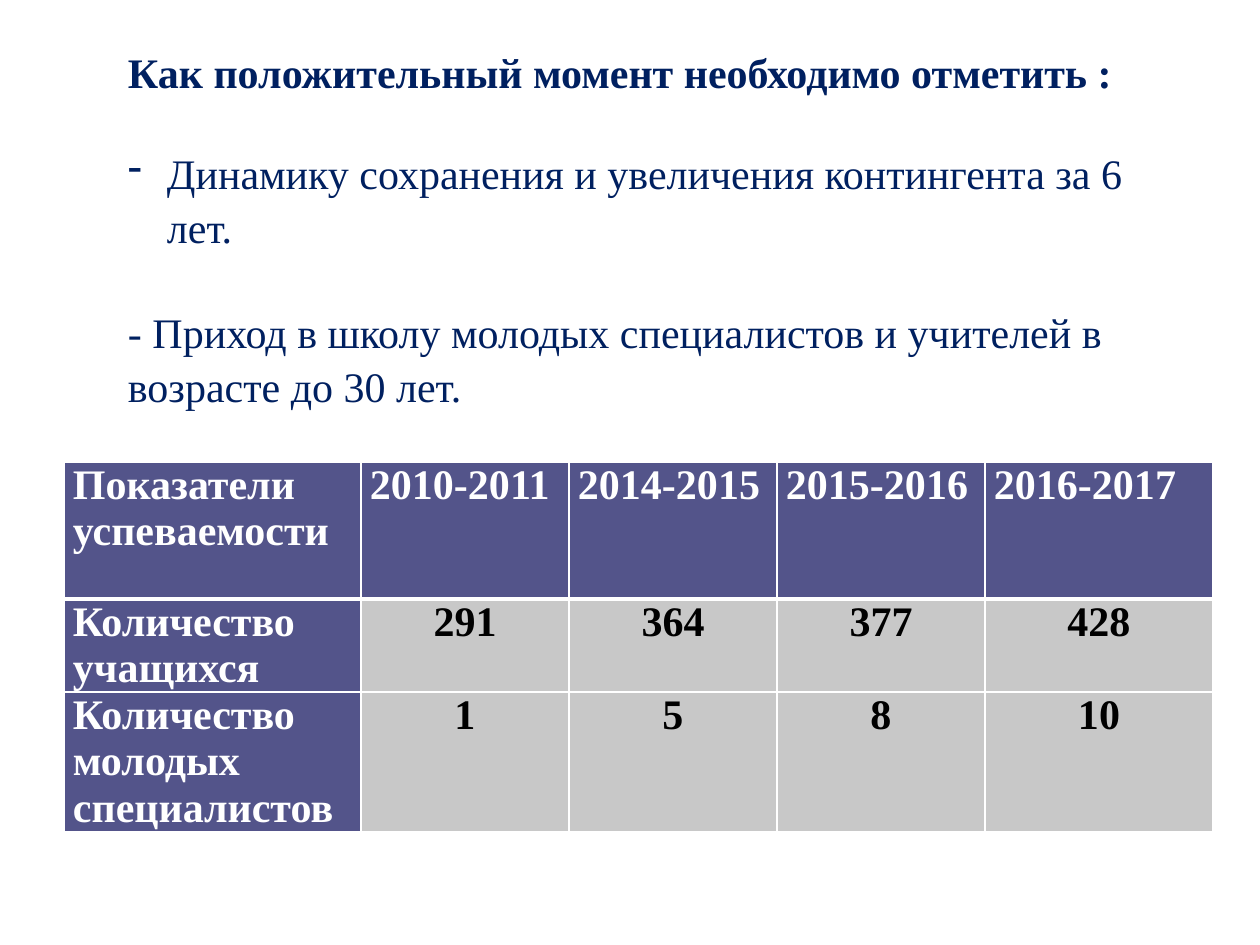
from lxml import etree
from pptx import Presentation
from pptx.dml.color import RGBColor
from pptx.enum.text import MSO_ANCHOR, MSO_AUTO_SIZE, PP_ALIGN
from pptx.oxml.ns import qn
from pptx.util import Emu, Pt

LEFT, CENTER, JUSTIFY = PP_ALIGN.LEFT, PP_ALIGN.CENTER, PP_ALIGN.JUSTIFY
TOP, FIXED = MSO_ANCHOR.TOP, MSO_AUTO_SIZE.NONE

PX_PER_INCH = 126
COLORS = {"navy": "002060", "violet": "53548A", "gray": "C8C8C8",
          "white": "FFFFFF", "black": "000000"}

HEADING = "Как положительный момент необходимо отметить :"
# Each item: text, bullet character, hanging indent in px
ITEMS = [
    ("Динамику сохранения и увеличения контингента за 6 лет.", "-", 39),
    ("- Приход в школу молодых специалистов и учителей в возрасте до 30 лет.", None, 0),
]
ROWS = [
    ["Показатели успеваемости", "2010-2011", "2014-2015", "2015-2016", "2016-2017"],
    ["Количество учащихся", "291", "364", "377", "428"],
    ["Количество молодых специалистов", "1", "5", "8", "10"],
]
COLUMN_WIDTHS = [297, 208, 208, 208, 228]
ROW_HEIGHTS = [137, 93, 139]


def px(length):
    return Emu(round(length * 914400 / PX_PER_INCH))


def rgb(name):
    return RGBColor.from_string(COLORS[name])


def set_values(target, values):
    for name, value in values.items():
        setattr(target, name, value)


class SlideBuilder:
    font = {"name": "Times New Roman", "size": Pt(24)}
    frame = {"word_wrap": True, "auto_size": FIXED, "vertical_anchor": TOP,
             "margin_left": px(13), "margin_right": px(13),
             "margin_top": px(6), "margin_bottom": px(6)}
    paragraph = {"alignment": LEFT, "line_spacing": 1.08,
                 "space_before": Pt(0), "space_after": Pt(0)}
    cell_margins = {"margin_left": px(9), "margin_right": px(9),
                    "margin_top": 0, "margin_bottom": 0}

    def __init__(self, page):
        self.page = page

    def add_text(self, para, text, color, bold, layout):
        set_values(para, layout)
        span = para.add_run()
        span.text = text
        set_values(span.font, {**self.font, "bold": bold})
        span.font.color.rgb = rgb(color)

    def place(self, box, left, top, width, height):
        set_values(box, {"left": px(left), "top": px(top),
                         "width": px(width), "height": px(height)})
        set_values(box.text_frame, self.frame)

    def title(self, text, *area):
        box = self.page.shapes.title
        self.place(box, *area)
        self.add_text(box.text_frame.paragraphs[0], text, "navy", True, self.paragraph)

    def bullet(self, para, char, indent):
        properties = para._p.get_or_add_pPr()
        properties.set("marL", str(px(indent)))
        properties.set("indent", str(-px(indent)))
        if char:
            etree.SubElement(properties, qn("a:buFontTx"))
            etree.SubElement(properties, qn("a:buChar"), char=char)
        else:
            etree.SubElement(properties, qn("a:buNone"))

    def body(self, items, gap, *area):
        box = self.page.placeholders[1]
        self.place(box, *area)
        frame = box.text_frame
        for index, (text, char, indent) in enumerate(items):
            para = frame.add_paragraph() if index else frame.paragraphs[0]
            self.bullet(para, char, indent)
            before = gap if index else Pt(0)
            self.add_text(para, text, "navy", False,
                          {**self.paragraph, "space_before": before})

    def borders(self, cell, top, bottom):
        properties = cell._tc.get_or_add_tcPr()
        for side, points in (("L", 1), ("R", 1), ("T", top), ("B", bottom)):
            line = etree.SubElement(properties, qn(f"a:ln{side}"), w=str(Pt(points)))
            fill = etree.SubElement(line, qn("a:solidFill"))
            etree.SubElement(fill, qn("a:srgbClr"), val=COLORS["white"])

    def table(self, rows, left, top, widths, heights):
        table = self.page.shapes.add_table(
            len(rows), len(widths), px(left), px(top),
            px(sum(widths)), px(sum(heights))).table
        table.horz_banding = False
        for column, width in zip(table.columns, widths):
            column.width = px(width)
        for row, height in zip(table.rows, heights):
            row.height = px(height)
        for i, texts in enumerate(rows):
            for j, text in enumerate(texts):
                cell = table.cell(i, j)
                label = i == 0 or j == 0
                set_values(cell, self.cell_margins)
                # A thick rule parts the header from the rows below
                self.borders(cell, 3 if i == 1 else 1, 3 if i == 0 else 1)
                cell.fill.solid()
                cell.fill.fore_color.rgb = rgb("violet" if label else "gray")
                self.add_text(cell.text_frame.paragraphs[0], text,
                              "white" if label else "black", True,
                              {"alignment": JUSTIFY if label else CENTER})


def main():
    deck = Presentation()
    set_values(deck, {"slide_width": px(1260), "slide_height": px(945)})
    builder = SlideBuilder(deck.slides.add_slide(deck.slide_layouts[1]))

    # Heading and list
    builder.title(HEADING, 115, 36, 1072, 63)
    builder.body(ITEMS, Pt(28.7), 115, 137, 1072, 268)

    # Yearly figures
    builder.table(ROWS, 64, 462, COLUMN_WIDTHS, ROW_HEIGHTS)

    deck.save("out.pptx")


if __name__ == "__main__":
    main()
